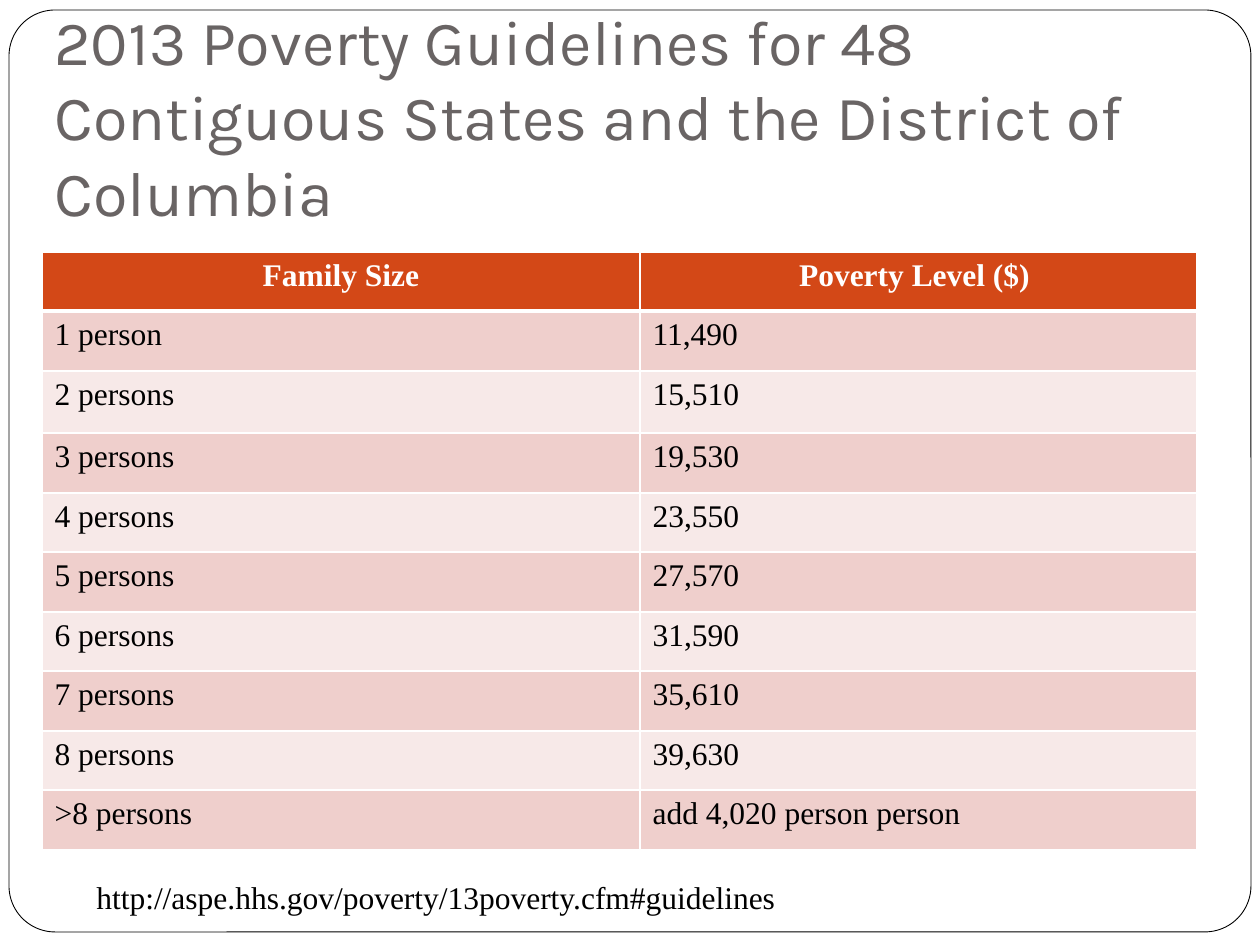
from dataclasses import dataclass

from lxml import etree
from pptx import Presentation
from pptx.dml.color import RGBColor
from pptx.enum.shapes import MSO_SHAPE
from pptx.enum.text import MSO_ANCHOR, PP_ALIGN
from pptx.oxml.ns import qn
from pptx.util import Pt

EMU_PER_PX = 914400 / 126
ROUNDED = MSO_SHAPE.ROUNDED_RECTANGLE
BOTTOM, TOP = MSO_ANCHOR.BOTTOM, MSO_ANCHOR.TOP
CENTER, LEFT = PP_ALIGN.CENTER, PP_ALIGN.LEFT

COLORS = {
    "white": "FFFFFF",
    "black": "000000",
    "title": "696464",
    "header": "D34817",
    "odd": "EFCFCC",
    "even": "F7E9E8",
}
TITLE_FORMAT = {"name": "Karla", "size": Pt(36)}
BODY_FORMAT = {"name": "Times New Roman", "size": Pt(18), "bold": False}
HEADER_FORMAT = {**BODY_FORMAT, "bold": True}

GUIDELINES = [
    ("Family Size", "Poverty Level ($) "),
    ("1 person", "11,490"),
    ("2 persons", "15,510"),
    ("3 persons", "19,530"),
    ("4 persons", "23,550"),
    ("5 persons", "27,570"),
    ("6 persons", "31,590"),
    ("7 persons", "35,610"),
    ("8 persons", "39,630"),
    (">8 persons", "add 4,020 person person"),
]
COLUMN_WIDTHS = (598, 557)
# Rows average 59.5 px; the third is a little taller.
ROW_HEIGHTS = [62 if row == 2 else 59 + row % 2 for row in range(len(GUIDELINES))]


@dataclass
class Label:
    text: str
    left: int
    top: int
    width: int
    height: int
    color: str
    font: dict
    anchor: MSO_ANCHOR
    bottom_inset: int


LABELS = [
    Label("2013 Poverty Guidelines for 48 Contiguous States and the District of Columbia",
          42, 38, 1218, 204, "title", TITLE_FORMAT, BOTTOM, 13),
    Label("http://aspe.hhs.gov/poverty/13poverty.cfm#guidelines",
          84, 872, 1081, 50, "black", BODY_FORMAT, TOP, 6),
]


def px(length: int) -> int:
    return round(length * EMU_PER_PX)


def rgb(color: str) -> RGBColor:
    return RGBColor.from_string(COLORS[color])


def write_text(frame, text: str, color: str, font: dict, align=LEFT) -> None:
    para = frame.paragraphs[0]
    para.alignment = align
    span = para.add_run()
    span.text = text
    for name, value in font.items():
        setattr(span.font, name, value)
    span.font.color.rgb = rgb(color)


def draw_frame(page) -> None:
    frame = page.shapes.add_shape(ROUNDED, px(9), px(10), px(1242), px(922))
    frame.adjustments[0] = 0.05
    frame.shadow.inherit = False
    frame.fill.solid()
    frame.fill.fore_color.rgb = rgb("white")
    frame.line.color.rgb = rgb("black")
    frame.line.width = Pt(0.5)


def draw_label(page, label: Label) -> None:
    box = page.shapes.add_textbox(
        px(label.left), px(label.top), px(label.width), px(label.height))
    frame = box.text_frame
    frame.word_wrap = True
    frame.vertical_anchor = label.anchor
    frame.margin_bottom = px(label.bottom_inset)
    write_text(frame, label.text, label.color, label.font)


def set_borders(cell, widths: dict) -> None:
    """Draw white cell borders; they must come before the fill in the XML."""
    properties = cell._tc.get_or_add_tcPr()
    for position, (side, width) in enumerate(widths.items()):
        line = etree.Element(qn(f"a:{side}"), w=str(Pt(width)))
        fill = etree.SubElement(line, qn("a:solidFill"))
        etree.SubElement(fill, qn("a:srgbClr"), val=COLORS["white"])
        properties.insert(position, line)


def draw_table(page) -> None:
    table = page.shapes.add_table(
        len(GUIDELINES), len(COLUMN_WIDTHS), px(42), px(252),
        px(sum(COLUMN_WIDTHS)), px(sum(ROW_HEIGHTS))).table
    for column, width in zip(table.columns, COLUMN_WIDTHS):
        column.width = px(width)
    for index, (row, texts) in enumerate(zip(table.rows, GUIDELINES)):
        row.height = px(ROW_HEIGHTS[index])
        is_header = index == 0
        fill = "header" if is_header else ("even", "odd")[index % 2]
        borders = {"lnL": 1, "lnR": 1, "lnT": 3 if index == 1 else 1,
                   "lnB": 3 if is_header else 1}
        for cell, text in zip(row.cells, texts):
            cell.fill.solid()
            cell.fill.fore_color.rgb = rgb(fill)
            set_borders(cell, borders)
            if is_header:
                write_text(cell.text_frame, text, "white", HEADER_FORMAT, CENTER)
            else:
                write_text(cell.text_frame, text, "black", BODY_FORMAT)


def main() -> None:
    deck = Presentation()
    deck.slide_width, deck.slide_height = px(1260), px(945)
    page = deck.slides.add_slide(deck.slide_layouts[6])
    draw_frame(page)
    draw_table(page)
    for label in LABELS:
        draw_label(page, label)
    deck.save("out.pptx")


if __name__ == "__main__":
    main()
